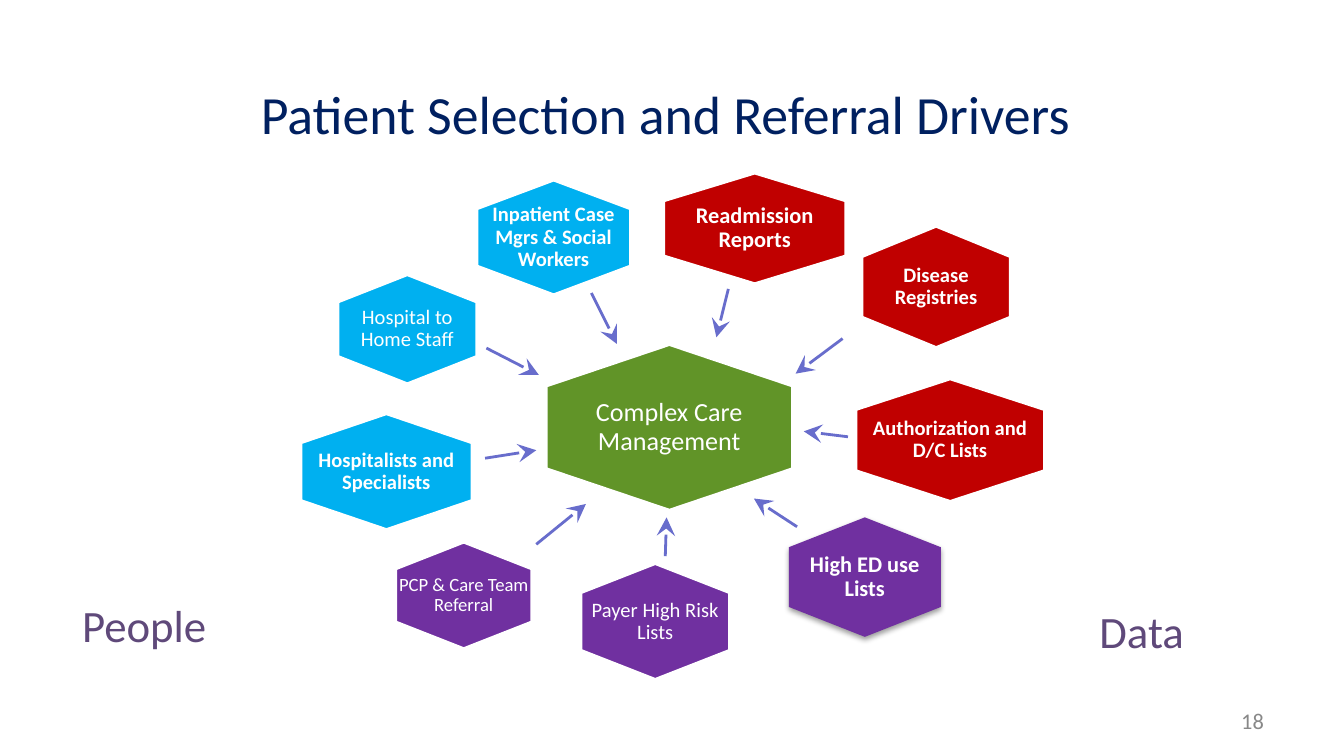
from lxml import etree
from pptx import Presentation
from pptx.dml.color import RGBColor
from pptx.enum.shapes import MSO_CONNECTOR, MSO_SHAPE
from pptx.enum.text import MSO_ANCHOR, MSO_AUTO_SIZE, PP_ALIGN
from pptx.oxml.ns import qn
from pptx.util import Pt

LEFT, CENTER, RIGHT = PP_ALIGN.LEFT, PP_ALIGN.CENTER, PP_ALIGN.RIGHT
TOP, MIDDLE = MSO_ANCHOR.TOP, MSO_ANCHOR.MIDDLE
HEXAGON = MSO_SHAPE.HEXAGON
STRAIGHT = MSO_CONNECTOR.STRAIGHT
TITLE_ONLY = 5

COLORS = {
    "title": "002060",
    "number": "888888",
    "side": "5F497A",
    "arrow": "686DCC",
    "hub": "619428",
    "staff": "00B0F0",
    "reports": "C00000",
    "referrals": "7030A0",
    "white": "FFFFFF",
    "shadow": "000000",
}

# text, colour, centre x, centre y, width, height, size, bold, inset
DRIVERS = [
    ("Payer High Risk Lists", "referrals", 351, 333, 80, 62.6, 11, False, 3.6),
    ("Complex Care Management", "hub", 358.6, 229, 132.5, 89.3, 14, False, 0),
    ("Hospital to Home Staff", "staff", 218.2, 176.4, 75, 59, 11, False, 3.6),
    ("Inpatient Case Mgrs & Social Workers", "staff", 296.6, 127.2, 82.8, 62, 11, True, 0),
    ("High ED use Lists", "referrals", 463.3, 309.2, 81.4, 64, 12, True, 3.6),
    ("Readmission Reports", "reports", 404.3, 122.4, 98, 59.8, 12, True, 0),
    ("Hospitalists and Specialists", "staff", 207, 252.7, 92.2, 62.6, 11, True, 3.6),
    ("Authorization and D/C Lists", "reports", 509, 235.8, 101.5, 66.2, 11, True, 0),
    ("Disease Registries", "reports", 501.5, 153.7, 80, 65.5, 11, True, 3.6),
    ("PCP & Care Team Referral", "referrals", 248.4, 319, 73.4, 57.6, 10, False, 0),
]
RAISED_DRIVER = "High ED use Lists"

# start x, start y, end x, end y
ARROWS = [
    (287.3, 291.6, 313.9, 270),
    (356.4, 298, 357.1, 277.2),
    (427, 282.2, 403.9, 267.1),
    (454.3, 234, 430.6, 231.1),
    (451.4, 181.4, 426.2, 200.2),
    (390.2, 154.8, 383.8, 180.7),
    (316.8, 157, 330.5, 184.3),
    (260.6, 186.5, 288.7, 200.9),
    (259.9, 245.5, 287.3, 241.2),
]


def rgb(name):
    return RGBColor.from_string(COLORS[name])


def write(holder, text, *, size, color, bold=False, align=LEFT, anchor=TOP,
          insets=(3.6, 3.6, 3.6, 3.6), line_spacing=None):
    """Fill a shape with one paragraph; insets are left, top, right, bottom."""
    frame = holder.text_frame
    frame.word_wrap = True
    frame.auto_size = MSO_AUTO_SIZE.NONE
    frame.vertical_anchor = anchor
    (frame.margin_left, frame.margin_top,
     frame.margin_right, frame.margin_bottom) = map(Pt, insets)
    paragraph = frame.paragraphs[0]
    paragraph.alignment = align
    paragraph.line_spacing = line_spacing
    run = paragraph.add_run()
    run.text = text
    run.font.name = "Calibri"
    run.font.size = Pt(size)
    run.font.bold = bold
    run.font.color.rgb = rgb(color)


def add_label(slide, text, left, top, width, height, **text_format):
    label = slide.shapes.add_textbox(Pt(left), Pt(top), Pt(width), Pt(height))
    write(label, text, **text_format)


def add_title(slide, text):
    title = slide.shapes.title
    title.left, title.top = Pt(60), Pt(13.7)
    title.width, title.height = Pt(593), Pt(58.3)
    # The deep top inset sets the line low in the box.
    write(title, text, size=28.8, color="title", align=CENTER, anchor=MIDDLE,
          insets=(7.2, 38.8, 7.2, 3.6))


def add_soft_shadow(shape):
    effects = shape._element.spPr.find(qn("a:effectLst"))
    shadow = etree.SubElement(
        effects, qn("a:outerShdw"), blurRad=str(Pt(3.1)), dist=str(Pt(1.6)),
        dir="5400000", rotWithShape="0")
    tint = etree.SubElement(shadow, qn("a:srgbClr"), val=COLORS["shadow"])
    etree.SubElement(tint, qn("a:alpha"), val="38000")


def add_driver(slide, text, color, x, y, width, height, size, bold, inset):
    """Add an upright hexagon with its level text, centred on x, y."""
    # A quarter turn swaps the sides of the preset hexagon.
    hexagon = slide.shapes.add_shape(
        HEXAGON, Pt(x - height / 2), Pt(y - width / 2), Pt(height), Pt(width))
    hexagon.rotation = 90
    hexagon.shadow.inherit = False
    hexagon.fill.solid()
    hexagon.fill.fore_color.rgb = rgb(color)
    if text == RAISED_DRIVER:
        hexagon.line.fill.background()
        add_soft_shadow(hexagon)
    else:
        hexagon.line.color.rgb = rgb("white")
        hexagon.line.width = Pt(2)

    text_width, text_height = height * 4 / 3, width * 3 / 4
    add_label(slide, text, x - text_width / 2, y - text_height / 2,
              text_width, text_height, size=size, color="white", bold=bold,
              align=CENTER, anchor=MIDDLE, insets=[inset] * 4, line_spacing=0.9)


def add_arrow(slide, *ends):
    arrow = slide.shapes.add_connector(STRAIGHT, *map(Pt, ends))
    arrow.line.color.rgb = rgb("arrow")
    arrow.line.width = Pt(1.5)
    etree.SubElement(arrow.line._get_or_add_ln(), qn("a:tailEnd"),
                     type="stealth", w="lg", len="lg")
    etree.SubElement(arrow._element.spPr, qn("a:effectLst"))


def main():
    deck = Presentation()
    deck.slide_width, deck.slide_height = Pt(720), Pt(405)
    slide = deck.slides.add_slide(deck.slide_layouts[TITLE_ONLY])

    add_title(slide, "Patient Selection and Referral Drivers")
    add_label(slide, "18", 516.2, 375, 168, 21.6, size=12, color="number",
              align=RIGHT, anchor=MIDDLE, insets=(7.2, 3.6, 7.2, 3.6))
    for driver in DRIVERS:
        add_driver(slide, *driver)
    for ends in ARROWS:
        add_arrow(slide, *ends)
    add_label(slide, "People", 40.4, 316.8, 112.3, 58.3, size=24, color="side")
    add_label(slide, "Data", 585.4, 319.7, 72, 54, size=24, color="side")

    deck.save("out.pptx")


if __name__ == "__main__":
    main()
